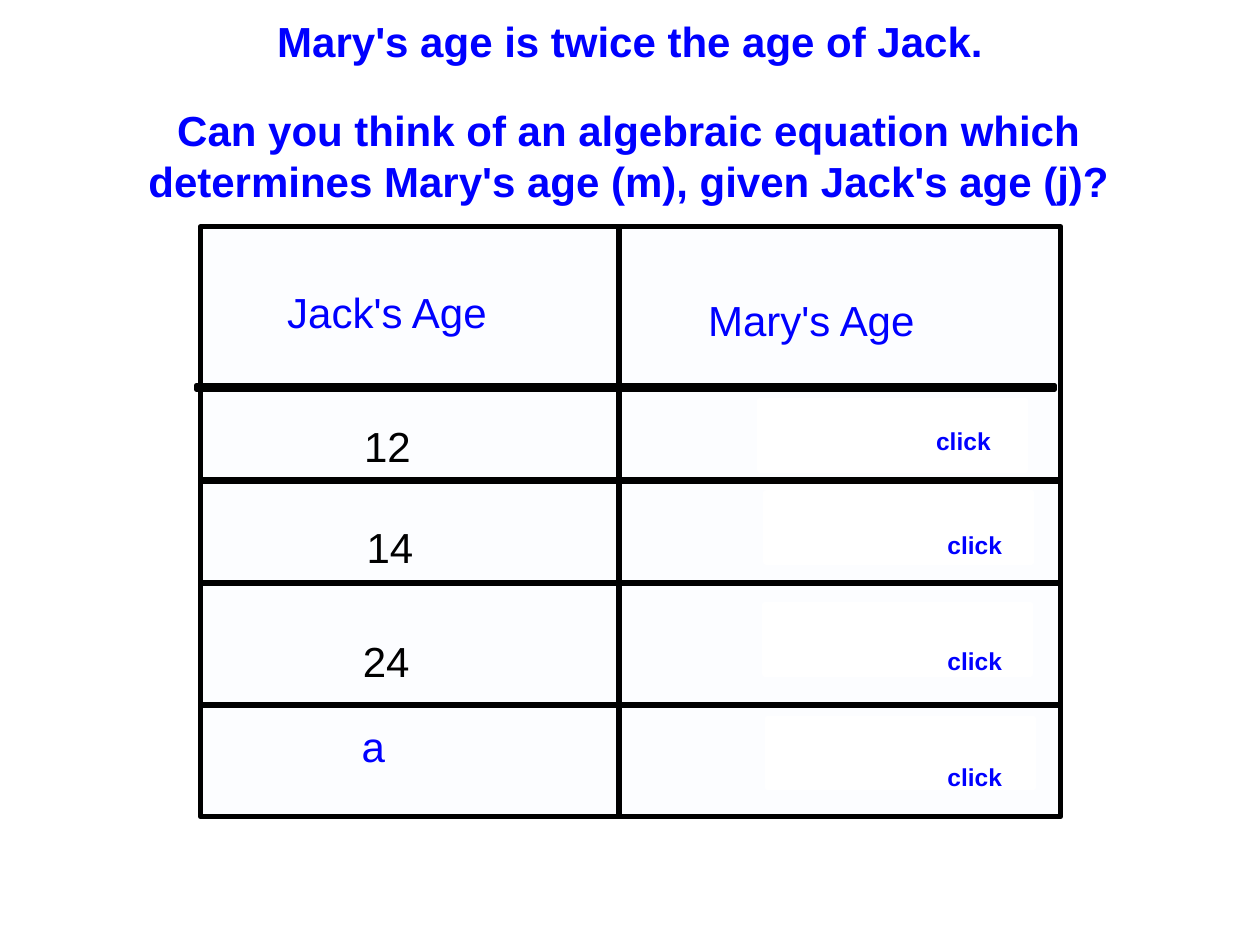
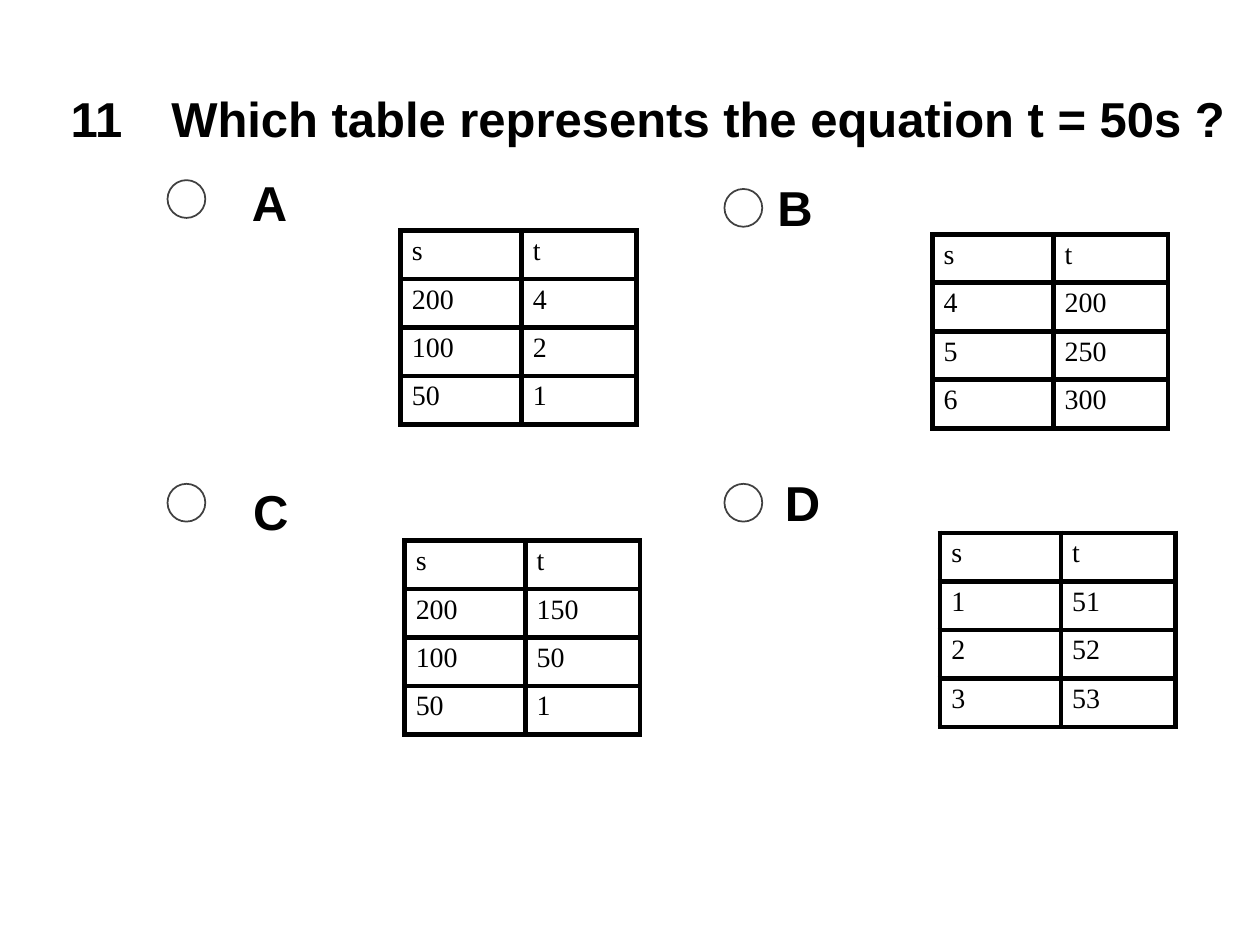
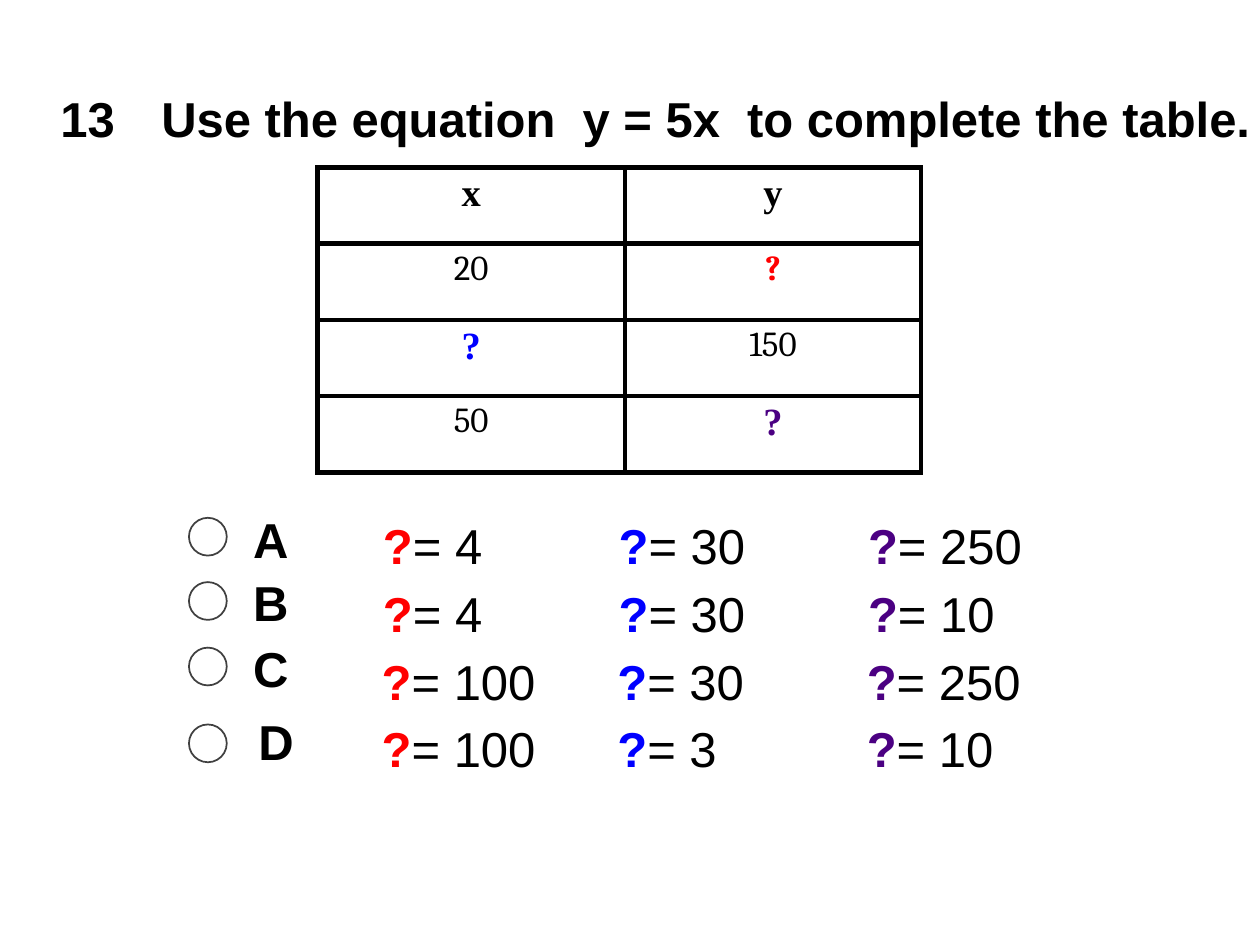
from lxml.etree import SubElement
from pptx import Presentation
from pptx.dml.color import RGBColor
from pptx.enum.shapes import MSO_SHAPE
from pptx.enum.text import MSO_ANCHOR, MSO_AUTO_SIZE, PP_ALIGN
from pptx.oxml import parse_xml
from pptx.oxml.ns import nsdecls, qn
from pptx.util import Inches, Pt

BLACK, WHITE, GRAY, PALE = "000000", "FFFFFF", "404040", "FCFDFF"
BLUE, RED, PURPLE = "0000FF", "FF0000", "4B0082"
SERIF, CAMBRIA = "Times New Roman", "Cambria"
LEFT, CENTER = PP_ALIGN.LEFT, PP_ALIGN.CENTER
rgb = RGBColor.from_string


def write(sp, text, size=28, color=BLACK, bold=True, font="Arial", align=LEFT, at=None):
    tf = sp.text_frame
    if at:
        sp.left, sp.top, sp.width, sp.height = [Inches(v) for v in at]
        tf.margin_left = tf.margin_right = Inches(0.08)
        tf.margin_top = tf.margin_bottom = Inches(0.04)
        tf.word_wrap = True
        tf.auto_size = MSO_AUTO_SIZE.NONE
        tf.vertical_anchor = MSO_ANCHOR.TOP
    tf.text = text
    for p in tf.paragraphs:
        p.alignment = align
        p.font.size = Pt(size)
        p.font.name = font
        p.font.bold = bold
        p.font.color.rgb = rgb(color)


def add_outlined(s, kind, x, y, w, h, fill, line, weight):
    sp = s.shapes.add_shape(kind, Inches(x), Inches(y), Inches(w), Inches(h))
    sp.shadow.inherit = False
    sp.fill.solid()
    sp.fill.fore_color.rgb = rgb(fill)
    sp.line.color.rgb = rgb(line)
    sp.line.width = Pt(weight)


prs = Presentation()
prs.slide_width, prs.slide_height = Inches(10), Inches(7.5)
layout = prs.slide_layouts[5]

s = prs.slides.add_slide(layout)
write(s.shapes.title, "Mary's age is twice the age of Jack.", 24, BLUE,
      align=CENTER, at=(0.69, 0.08, 8.62, 0.49))

add_outlined(s, MSO_SHAPE.RECTANGLE, 1.59, 1.8, 6.83, 4.68, PALE, BLACK, 3)
for x, y, w, h in [(1.56, 3.06, 6.81, 0.03), (1.6, 3.81, 6.81, 0.01),
                   (1.59, 4.62, 6.81, 0.01), (1.59, 5.59, 6.81, 0.01),
                   (4.91, 1.82, 0.01, 4.65)]:
    add_outlined(s, MSO_SHAPE.RECTANGLE, x, y, w, h, BLACK, BLACK, 3)

for text, color, x, y, w in [
    ("Jack's Age", BLUE, 2.2, 2.23, 2.27),
    ("Mary's Age", BLUE, 5.54, 2.3, 2.4),
    ("12", BLACK, 2.81, 3.3, 0.72),
    ("14", BLACK, 2.83, 4.1, 0.72),
    ("24", BLACK, 2.8, 5, 0.78),
    ("a", BLUE, 2.79, 5.68, 1.02),
]:
    write(s.shapes.add_textbox(0, 0, 0, 0), text, 24, color, bold=False, at=(x, y, w, 0.49))

write(s.shapes.add_textbox(0, 0, 0, 0),
      "Can you think of an algebraic equation which\n"
      "determines Mary's age (m), given Jack's age (j)?",
      24, BLUE, align=CENTER, at=(0, 0.79, 9.98, 0.89))

for x, y, click_x, click_y in [(6.03, 3.18, 7.35, 3.34), (6.08, 3.91, 7.44, 4.17),
                               (6.07, 4.8, 7.44, 5.09), (6.09, 5.7, 7.44, 6.01)]:
    add_outlined(s, MSO_SHAPE.RECTANGLE, x, y, 2.11, 0.55, WHITE, WHITE, 3)
    write(s.shapes.add_textbox(0, 0, 0, 0), "click", 14, BLUE,
          at=(click_x, click_y, 0.8, 0.34))

questions = [
    ("11", "Which table represents the equation t = 50s ?", 0.48, 0.66, 8.72,
     [("A", 1.92, 1.33, 1.33, 1.43), ("B", 6.09, 1.37, 5.75, 1.5),
      ("C", 1.93, 3.78, 1.33, 3.84), ("D", 6.15, 3.71, 5.75, 3.84)],
     [0.96, 0.91], 1.54 / 4, [
         (3.18, 1.83, ["s", "t", "200", "4", "100", "2", "50", "1"]),
         (7.4, 1.86, ["s", "t", "4", "200", "5", "250", "6", "300"]),
         (3.21, 4.29, ["s", "t", "200", "150", "100", "50", "50", "1"]),
         (7.46, 4.23, ["s", "t", "1", "51", "2", "52", "3", "53"])]),
    ("13", "Use the equation  y = 5x  to complete the table.", 0.4, 0.66, 8.89,
     [("A", 1.93, 4, 1.5, 4.11), ("B", 1.93, 4.5, 1.5, 4.62),
      ("C", 1.93, 5.03, 1.5, 5.14), ("D", 1.97, 5.61, 1.5, 5.75)],
     [2.44, 2.35], 2.42 / 4, [
         (2.52, 1.33, ["x", "y", "20", "?", "?", "150", "50", "?"])]),
]
for number, question, x, y, width, options, cols, row_height, tables in questions:
    s = prs.slides.add_slide(layout)
    write(s.shapes.title, question, at=(x + 0.8, y, width, 0.55))
    write(s.shapes.add_textbox(0, 0, 0, 0), number, at=(x, y, width, 0.55))
    for letter, letter_x, letter_y, circle_x, circle_y in options:
        write(s.shapes.add_textbox(0, 0, 0, 0), letter, at=(letter_x, letter_y, 1.54, 0.55))
    for table_x, table_y, values in tables:
        frame = s.shapes.add_table(4, 2, Inches(table_x), Inches(table_y),
                                   Inches(sum(cols)), Inches(row_height * 4))
        table = frame.table
        table.first_row = table.horz_banding = False
        for col, col_width in zip(table.columns, cols):
            col.width = Inches(col_width)
        for row in table.rows:
            row.height = Inches(row_height)
        for cell, value in zip(table.iter_cells(), values):
            cell.margin_left = cell.margin_right = Inches(0.09)
            cell.margin_top = cell.margin_bottom = Inches(0.04)
            cell.fill.solid()
            cell.fill.fore_color.rgb = rgb(WHITE)
            for i, side in enumerate(("lnL", "lnR", "lnT", "lnB")):
                cell._tc.get_or_add_tcPr().insert(i, parse_xml(
                    f'<a:{side} {nsdecls("a")} w="{Pt(3)}"><a:solidFill>'
                    f'<a:srgbClr val="{BLACK}"/></a:solidFill></a:{side}>'))
            write(cell, value, 16, bold=False, font=SERIF)
    for letter, letter_x, letter_y, circle_x, circle_y in options:
        add_outlined(s, MSO_SHAPE.OVAL, circle_x, circle_y, 0.3, 0.3, WHITE, GRAY, 1)

for cell, (size, color, bold, font) in zip(table.iter_cells(), [
    (22, BLACK, True, SERIF), (22, BLACK, True, SERIF),
    (20, BLACK, False, CAMBRIA), (20, RED, True, CAMBRIA),
    (22, BLUE, True, SERIF), (20, BLACK, False, CAMBRIA),
    (20, BLACK, False, CAMBRIA), (22, PURPLE, True, SERIF),
]):
    write(cell, cell.text, size, color, bold, font, CENTER)

for x, y, answers in [(2.96, 4.05, ("4", "30", "250")), (2.96, 4.59, ("4", "30", "10")),
                      (2.95, 5.13, ("100", "30", "250")), (2.95, 5.66, ("100", "3", "10"))]:
    sp = s.shapes.add_textbox(0, 0, 0, 0)
    write(sp, "", bold=False, at=(x, y, 5.54, 0.55))
    p = sp.text_frame.paragraphs[0]
    tabs = parse_xml(f'<a:tabLst {nsdecls("a")}/>')
    for stop in (1.87, 3.85):
        SubElement(tabs, qn("a:tab"), pos=str(Inches(stop)), algn="l")
    p._p.get_or_add_pPr().insert(0, tabs)
    for color, answer, gap in zip((RED, BLUE, PURPLE), answers, ("\t", "\t", "")):
        r = p.add_run()
        r.text = "?"
        r.font.bold = True
        r.font.color.rgb = rgb(color)
        p.add_run().text = f"= {answer}{gap}"

prs.save("out.pptx")
